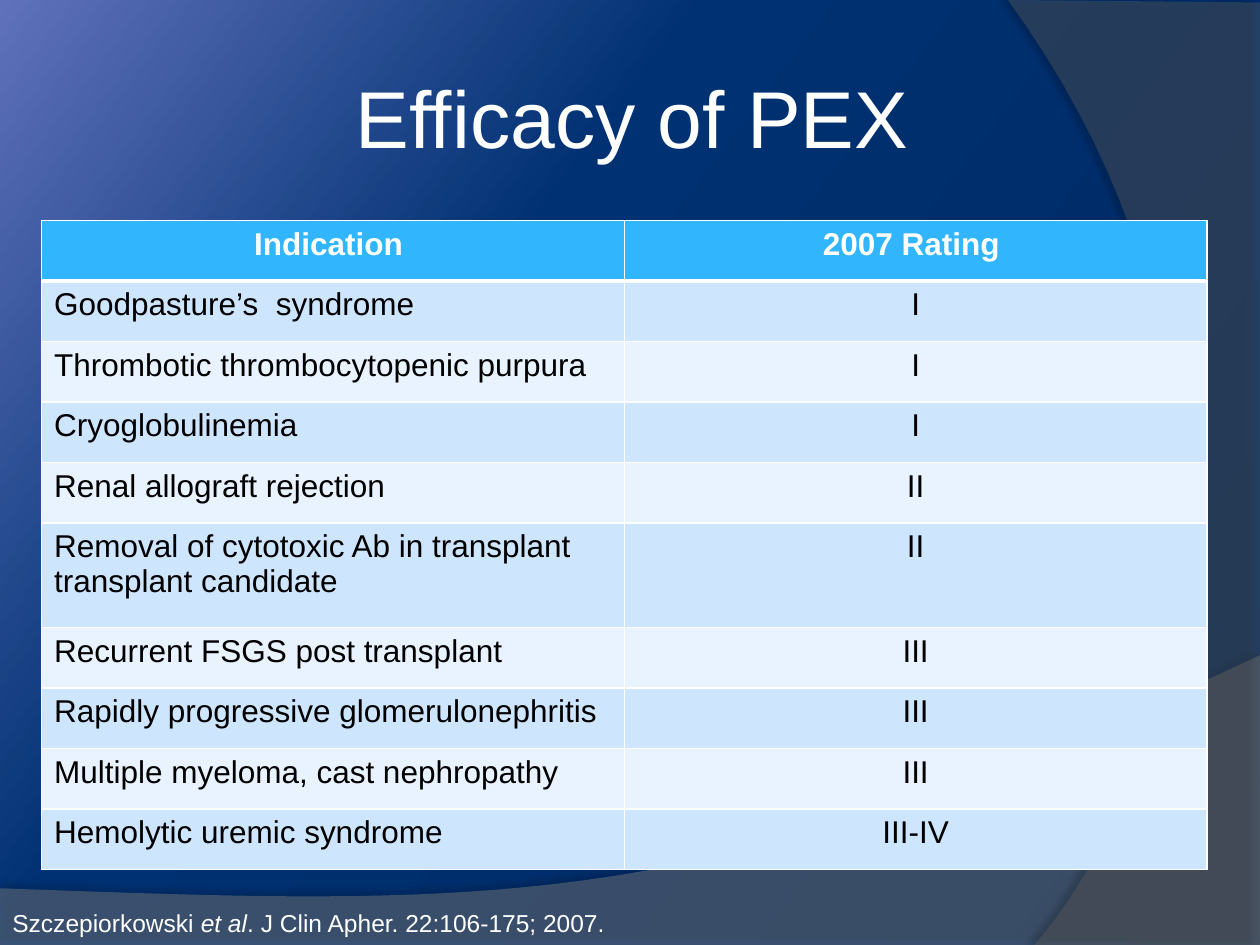
from lxml import etree
from pptx import Presentation
from pptx.dml.color import RGBColor
from pptx.enum.text import MSO_ANCHOR, MSO_AUTO_SIZE, PP_ALIGN
from pptx.oxml import parse_xml
from pptx.oxml.ns import qn
from pptx.util import Inches, Pt

LEFT, CENTER = PP_ALIGN.LEFT, PP_ALIGN.CENTER
MIDDLE = MSO_ANCHOR.MIDDLE
NO_FIT, GROW = MSO_AUTO_SIZE.NONE, MSO_AUTO_SIZE.SHAPE_TO_FIT_TEXT

WHITE = RGBColor(0xFF, 0xFF, 0xFF)
BLACK = RGBColor(0x00, 0x00, 0x00)
HEAD = RGBColor(0x31, 0xB6, 0xFD)
ODD = RGBColor(0xCE, 0xE5, 0xFE)
EVEN = RGBColor(0xE8, 0xF3, 0xFF)
GRAY = RGBColor(0x7F, 0x7F, 0x7F)
DARK = RGBColor(0x5E, 0x5E, 0x5E)
NAVY = RGBColor(0x00, 0x29, 0x5F)
BLUE = RGBColor(0x00, 0x31, 0x72)
LILAC = RGBColor(0x5F, 0x71, 0xBB)
NS = 'xmlns:a="http://schemas.openxmlformats.org/drawingml/2006/main"'

ROWS = [
    ("Indication ", "2007 Rating "),
    ("Goodpasture’s  syndrome", "I"),
    ("Thrombotic thrombocytopenic purpura", "I"),
    ("Cryoglobulinemia", "I"),
    ("Renal allograft rejection", "II"),
    ("Removal of cytotoxic Ab in transplant transplant candidate", "II"),
    ("Recurrent FSGS post transplant", "III"),
    ("Rapidly progressive glomerulonephritis", "III"),
    ("Multiple myeloma, cast nephropathy", "III"),
    ("Hemolytic uremic syndrome", "III-IV"),
]
TALL = 5


def style(run, size, color, bold=False, italic=False):
    font = run.font
    font.name, font.size = "Arial", Pt(size)
    font.bold, font.italic = bold, italic
    font.color.rgb = color


def paint_back(slide):
    fill = slide.background.fill
    fill.gradient()
    fill.gradient_angle = 143
    stops = slide.background._cSld.find(".//" + qn("a:gsLst"))
    for stop in list(stops):
        stops.remove(stop)
    for pos, color in ((0, NAVY), (64, BLUE), (100, LILAC)):
        stops.append(parse_xml(
            f'<a:gs {NS} pos="{pos * 1000}"><a:srgbClr val="{color}"/></a:gs>'))


def curve(points, steps=40):
    a, b, c, d = points
    for i in range(1, steps + 1):
        t = i / steps
        u = 1 - t
        yield tuple(u**3 * p + 3 * u * u * t * q + 3 * u * t * t * r + t**3 * s
                    for p, q, r, s in zip(a, b, c, d))


def add_wave(slide, edge, bend, color, alpha, shade, dist, angle):
    points = edge + list(curve([edge[-1]] + bend))
    spots = [(Inches(x), Inches(y)) for x, y in points]
    form = slide.shapes.build_freeform(*spots[0])
    form.add_line_segments(spots[1:])
    wave = form.convert_to_shape()
    wave.fill.solid()
    wave.fill.fore_color.rgb = color
    tint = wave.element.spPr.find(".//" + qn("a:srgbClr"))
    etree.SubElement(tint, qn("a:alpha"), val=str(alpha * 1000))
    wave.line.fill.background()
    wave.element.spPr.append(parse_xml(
        f'<a:effectLst {NS}><a:outerShdw blurRad="{Pt(4)}" dist="{Pt(dist)}" '
        f'dir="{angle * 60000}" algn="ctr" rotWithShape="0"><a:srgbClr val="000000">'
        f'<a:alpha val="{shade * 1000}"/></a:srgbClr></a:outerShdw></a:effectLst>'))


def set_title(slide, text):
    title = slide.shapes.title
    title.element.getparent().append(title.element)
    title.left, title.top = Inches(0.93), Inches(0.3)
    title.width, title.height = Inches(8.17), Inches(1.25)
    frame = title.text_frame
    frame.text = text
    frame.auto_size = NO_FIT
    frame.word_wrap = True
    frame.vertical_anchor = MIDDLE
    frame.margin_left = frame.margin_right = Inches(0.05)
    frame.margin_top = frame.margin_bottom = Inches(0.05)
    line = frame.paragraphs[0]
    line.alignment = CENTER
    style(line.runs[0], 46, WHITE)


def set_edges(cell, base):
    props = cell._tc.get_or_add_tcPr()
    widths = (("L", 1), ("R", 1), ("T", 1), ("B", base))
    for i, (side, width) in enumerate(widths):
        props.insert(i, parse_xml(
            f'<a:ln{side} {NS} w="{Pt(width)}"><a:solidFill>'
            f'<a:srgbClr val="{WHITE}"/></a:solidFill></a:ln{side}>'))


def set_cell(cell, text, row, col):
    head = row == 0
    cell.text = text
    cell.fill.solid()
    cell.fill.fore_color.rgb = HEAD if head else ODD if row % 2 else EVEN
    line = cell.text_frame.paragraphs[0]
    line.alignment = CENTER if head or col else LEFT
    style(line.runs[0], 18, WHITE if head else BLACK, bold=head)
    set_edges(cell, 3 if row == 0 else 1)


def add_grid(slide):
    table = slide.shapes.add_table(
        len(ROWS), 2, Inches(0.33), Inches(1.75), Inches(9.25), Inches(5.17)).table
    for i, texts in enumerate(ROWS):
        table.rows[i].height = Inches(0.83 if i == TALL else 0.48)
        for j, text in enumerate(texts):
            set_cell(table.cell(i, j), text, i, j)
            if i == 1:
                set_top(table.cell(i, j))


def set_top(cell):
    cell._tc.tcPr.find(qn("a:lnT")).set("w", str(Pt(3)))


def add_source(slide, parts):
    box = slide.shapes.add_textbox(
        Inches(0), Inches(7.16), Inches(5.17), Inches(0.34))
    frame = box.text_frame
    frame.word_wrap = True
    frame.auto_size = GROW
    for text, italic in parts:
        run = frame.paragraphs[0].add_run()
        run.text = text
        style(run, 14, WHITE, italic=italic)


def main():
    deck = Presentation()
    deck.slide_width, deck.slide_height = Inches(10), Inches(7.5)
    slide = deck.slides.add_slide(deck.slide_layouts[5])
    paint_back(slide)
    add_wave(slide, [(0, 7.05), (0, 7.51), (10, 7.51), (10, 5.2)],
             [(5.59, 7.29), (3.91, 7.19), (0, 7.05)], GRAY, 45, 35, 3.5, 270)
    add_wave(slide, [(10, 0.02), (10, 7.5), (8.21, 7.5)],
             [(9.35, 6.19), (10.18, 3), (8, 0)], DARK, 40, 45, 4, 180)
    set_title(slide, "Efficacy of PEX")
    add_grid(slide)
    add_source(slide, [("Szczepiorkowski ", False), ("et al", True),
                       (". J Clin Apher. 22:106-175; 2007.", False)])
    deck.save("out.pptx")


if __name__ == "__main__":
    main()
